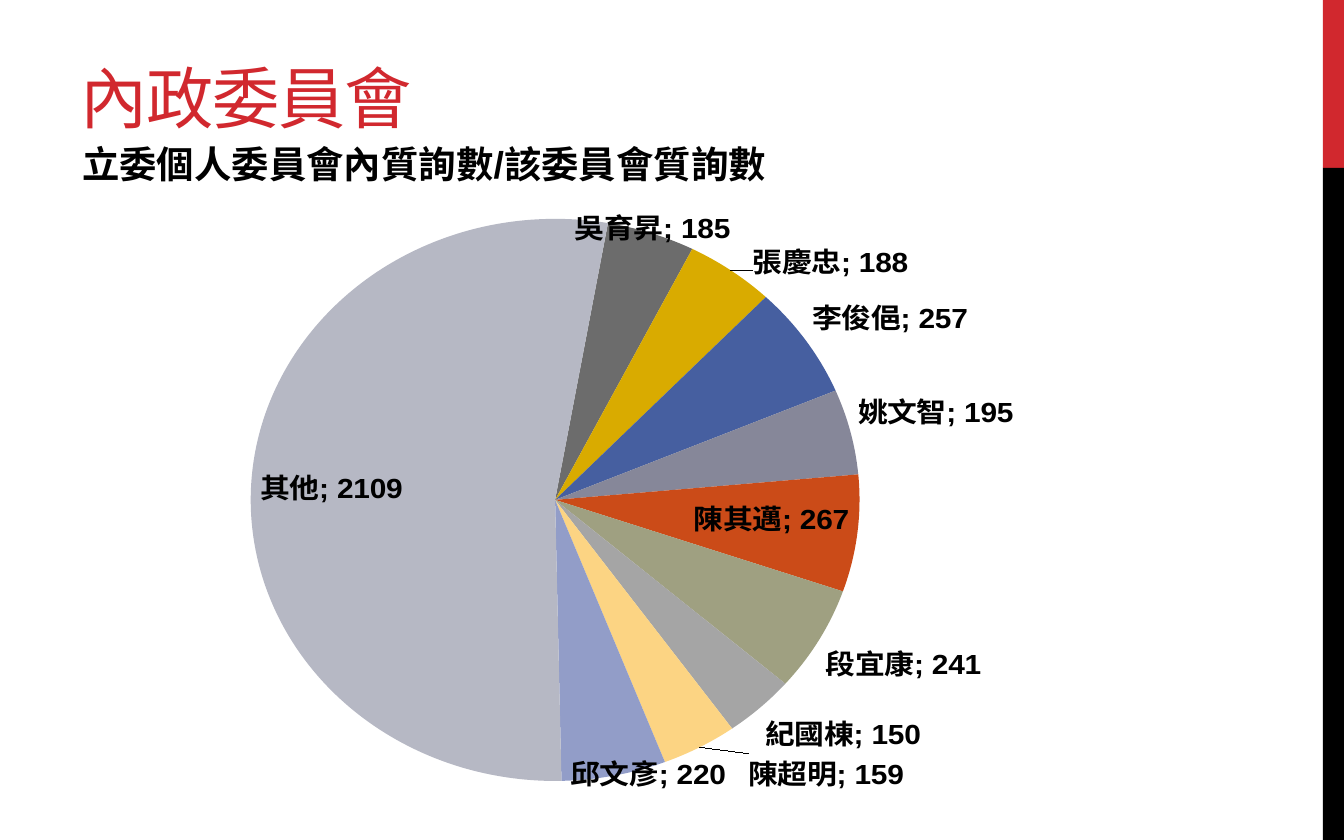
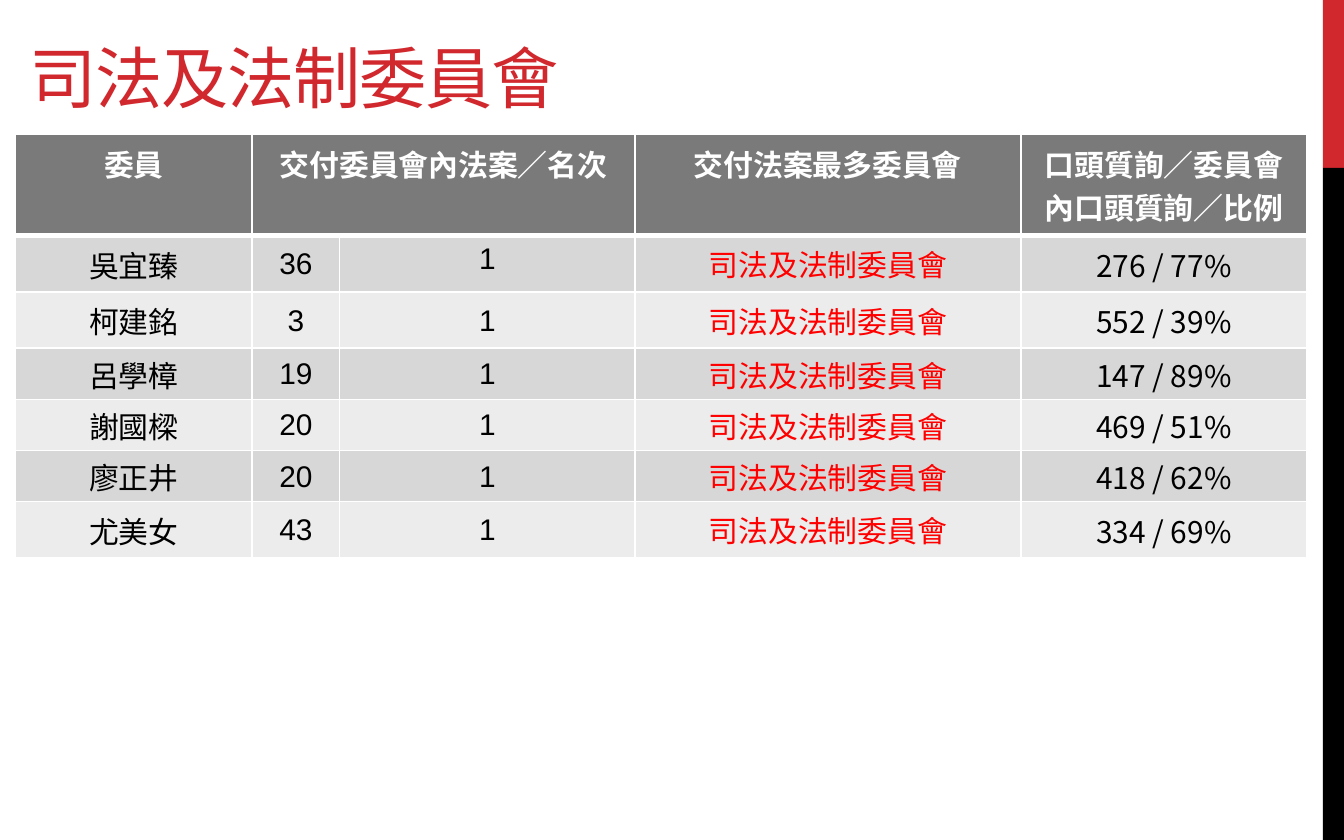
from dataclasses import dataclass

from lxml.etree import SubElement
from pptx import Presentation
from pptx.chart.data import CategoryChartData
from pptx.dml.color import RGBColor
from pptx.enum.chart import XL_CHART_TYPE as ChartType, XL_LABEL_POSITION as LabelPosition
from pptx.enum.shapes import MSO_SHAPE as Preset
from pptx.enum.text import MSO_ANCHOR as Anchor, PP_ALIGN as Align
from pptx.oxml import parse_xml
from pptx.oxml.ns import nsdecls, qn
from pptx.util import Pt


@dataclass(frozen=True)
class Theme:
    accent: str = "D1282E"
    ink: str = "000000"
    paper: str = "FFFFFF"
    highlight: str = "FF0000"
    header: str = "7A7A7A"
    stripes: tuple = ("D7D7D7", "ECECEC")
    slices: tuple = ("6C6C6C", "D9AB00", "465FA0", "868799", "CB4B18",
                     "9FA081", "A5A5A5", "FCD483", "929DC8", "B6B8C4")
    latin: str = "Arial"
    display: str = "Montserrat"
    cjk: str = "Noto Sans CJK TC"
    title_size: int = 36
    subtitle_size: int = 20
    body_size: int = 16
    chart_size: int = 10


QUESTIONS = {
    "吳育昇": 185, "張慶忠": 188, "李俊俋": 257, "姚文智": 195, "陳其邁": 267,
    "段宜康": 241, "紀國棟": 150, "陳超明": 159, "邱文彥": 220, "其他": 2109,
}

COMMITTEE = "司法及法制委員會"
HEADINGS = ("委員", "交付委員會內法案／名次", "", "交付法案最多委員會",
            "口頭質詢／委員會內口頭質詢／比例")
MEMBERS = [
    ("吳宜臻", 36, "276 / 77%"),
    ("柯建銘", 3, "552 / 39%"),
    ("呂學樟", 19, "147 / 89%"),
    ("謝國樑", 20, "469 / 51%"),
    ("廖正井", 20, "418 / 62%"),
    ("尤美女", 43, "334 / 69%"),
]
COLUMN_WIDTHS = (126.7, 46.8, 158.4, 206.6, 153.4)
HEADER_HEIGHT, TALL_HEIGHT, MEMBER_HEIGHT = 54.2, 30.2, 27.4
RANK, COMMITTEE_COLUMN, RATIO = 2, 3, 4
TOP_ALIGNED = {(1, RANK), (1, COMMITTEE_COLUMN), (2, COMMITTEE_COLUMN), (6, COMMITTEE_COLUMN)}
TALL_ROWS = {row for row, _ in TOP_ALIGNED}


def rgb(value):
    return RGBColor.from_string(value)


def box(left, top, width, height):
    return Pt(left), Pt(top), Pt(width), Pt(height)


def set_insets(frame, left, top, right, bottom):
    frame.margin_left, frame.margin_top = Pt(left), Pt(top)
    frame.margin_right, frame.margin_bottom = Pt(right), Pt(bottom)


class Deck:
    def __init__(self, theme):
        self.theme = theme
        self.presentation = Presentation()
        self.presentation.slide_width = Pt(720)
        self.presentation.slide_height = Pt(450)
        self.slide = None

    def new_slide(self):
        self.slide = self.presentation.slides.add_slide(self.presentation.slide_layouts[6])
        self.band(0, 90, self.theme.accent)
        self.band(90, 360, self.theme.ink)

    def band(self, top, height, color):
        band = self.slide.shapes.add_shape(Preset.RECTANGLE, *box(708.75, top, 11.25, height))
        band.shadow.inherit = False
        band.fill.solid()
        band.fill.fore_color.rgb = rgb(color)
        band.line.fill.background()

    def format_paragraph(self, paragraph, size, color, bold=False, latin=None, tracking=None):
        for run in paragraph.runs:
            run.font.size = Pt(size)
            run.font.bold = bold
            run.font.color.rgb = rgb(color)
            run.font.name = latin or self.theme.latin
            properties = run._r.get_or_add_rPr()
            SubElement(properties, qn("a:ea")).set("typeface", self.theme.cjk)
            if tracking:
                properties.set("spc", str(tracking))

    def text(self, content, place, anchor, size, color, **style):
        frame = self.slide.shapes.add_textbox(*box(*place)).text_frame
        frame.word_wrap = True
        frame.vertical_anchor = anchor
        set_insets(frame, 7.2, 3.6, 7.2, 3.6)
        frame.text = content
        self.format_paragraph(frame.paragraphs[0], size, color, **style)
        return frame.paragraphs[0]

    def title(self, content, left, top, latin):
        self.text(content, (left, top, 455.8, 90), Anchor.BOTTOM, self.theme.title_size,
                  self.theme.accent, latin=latin, tracking=-60)

    def subtitle(self, content):
        paragraph = self.text(content, (37, 72, 599.8, 287.3), Anchor.TOP,
                              self.theme.subtitle_size, self.theme.ink, bold=True)
        paragraph.space_after = Pt(6)

    def pie(self, counts, place, plot_layout, start_angle):
        data = CategoryChartData()
        data.categories = list(counts)
        data.add_series("Series 1", list(counts.values()))
        chart = self.slide.shapes.add_chart(ChartType.PIE, *box(*place), data).chart
        chart.has_legend = False
        chart.has_title = False
        chart.font.size = Pt(self.theme.chart_size)
        chart.font.name = self.theme.latin
        chart.font.color.rgb = rgb(self.theme.ink)
        plot = chart.plots[0]
        plot.vary_by_categories = True
        series = plot.series[0]
        for index, color in enumerate(self.theme.slices):
            fill = series.points[index].format.fill
            fill.solid()
            fill.fore_color.rgb = rgb(color)
        self.label_slices(series.data_labels)

        pie = chart._chartSpace.find(".//" + qn("c:pieChart"))
        for old_angle in pie.findall(qn("c:firstSliceAng")):
            pie.remove(old_angle)
        SubElement(pie, qn("c:firstSliceAng")).set("val", str(start_angle))
        self.place_plot(pie.getparent(), plot_layout)

    def label_slices(self, labels):
        labels.show_value = True
        labels.show_category_name = True
        labels.show_percentage = False
        labels.position = LabelPosition.BEST_FIT
        labels.font.size = Pt(self.theme.body_size)
        labels.font.bold = True
        labels.font.name = self.theme.latin
        labels.font.color.rgb = rgb(self.theme.ink)
        separator = parse_xml(f'<c:separator {nsdecls("c")}>; </c:separator>')
        labels._element.find(qn("c:showBubbleSize")).addnext(separator)

    @staticmethod
    def place_plot(plot_area, fractions):
        """Fix the inner plot area as fractions of the chart frame."""
        for old_layout in plot_area.findall(qn("c:layout")):
            plot_area.remove(old_layout)
        layout = parse_xml(f'<c:layout {nsdecls("c")}><c:manualLayout/></c:layout>')
        settings = [("layoutTarget", "inner"), ("xMode", "edge"), ("yMode", "edge")]
        settings += zip("xywh", fractions)
        for tag, value in settings:
            SubElement(layout[0], qn(f"c:{tag}")).set("val", str(value))
        plot_area.insert(0, layout)

    def cell(self, cell, content, fill, insets, anchor, color, **style):
        cell.fill.solid()
        cell.fill.fore_color.rgb = rgb(fill)
        cell.vertical_anchor = anchor
        set_insets(cell, *insets)
        cell.text_frame.text = str(content)
        paragraph = cell.text_frame.paragraphs[0]
        paragraph.alignment = Align.CENTER
        self.format_paragraph(paragraph, self.theme.body_size, color, **style)

    def borders(self, cell, bottom=1):
        properties = cell._tc.get_or_add_tcPr()
        for index, (side, width) in enumerate(zip("LRTB", (1, 1, 1, bottom))):
            properties.insert(index, parse_xml(
                f'<a:ln{side} {nsdecls("a")} w="{Pt(width)}"><a:solidFill>'
                f'<a:srgbClr val="{self.theme.paper}"/></a:solidFill></a:ln{side}>'))

    def member_table(self, left, top):
        theme = self.theme
        heights = [HEADER_HEIGHT] + [TALL_HEIGHT if row in TALL_ROWS else MEMBER_HEIGHT
                                     for row in range(1, len(MEMBERS) + 1)]
        table = self.slide.shapes.add_table(
            len(heights), len(COLUMN_WIDTHS),
            *box(left, top, sum(COLUMN_WIDTHS), sum(heights))).table
        for column, width in zip(table.columns, COLUMN_WIDTHS):
            column.width = Pt(width)
        for row, height in zip(table.rows, heights):
            row.height = Pt(height)

        for column, heading in enumerate(HEADINGS):
            cell = table.cell(0, column)
            self.cell(cell, heading, theme.header, (7.2, 4.3, 7.2, 4.3), Anchor.TOP,
                      theme.paper, bold=True)
            self.borders(cell, bottom=3)
        table.cell(0, 1).merge(table.cell(0, 2))

        for row, (member, bills, ratio) in enumerate(MEMBERS, start=1):
            for column, content in enumerate((member, bills, 1, COMMITTEE, ratio)):
                cell = table.cell(row, column)
                if (row, column) in TOP_ALIGNED:
                    insets, anchor = (7.2, 3.6, 7.2, 3.6), Anchor.TOP
                else:
                    insets, anchor = (0.7, 0.7, 0.7, 0), Anchor.MIDDLE
                self.cell(cell, content, theme.stripes[(row - 1) % 2], insets, anchor,
                          theme.highlight if column == COMMITTEE_COLUMN else theme.ink,
                          latin=theme.cjk if column == RATIO else theme.latin)
                self.borders(cell)


def main():
    theme = Theme()
    deck = Deck(theme)

    deck.new_slide()
    deck.title("內政委員會", 36, -13, theme.display)
    deck.subtitle("立委個人委員會內質詢數/該委員會質詢數")
    deck.pie(QUESTIONS, (69.8, 100.4, 607, 339.8), (0.09, 0.02, 0.57, 0.96), start_angle=10)

    deck.new_slide()
    deck.title(COMMITTEE, 8.6, -23.8, theme.latin)
    deck.member_table(8.4, 72)

    deck.presentation.save("out.pptx")


if __name__ == "__main__":
    main()
